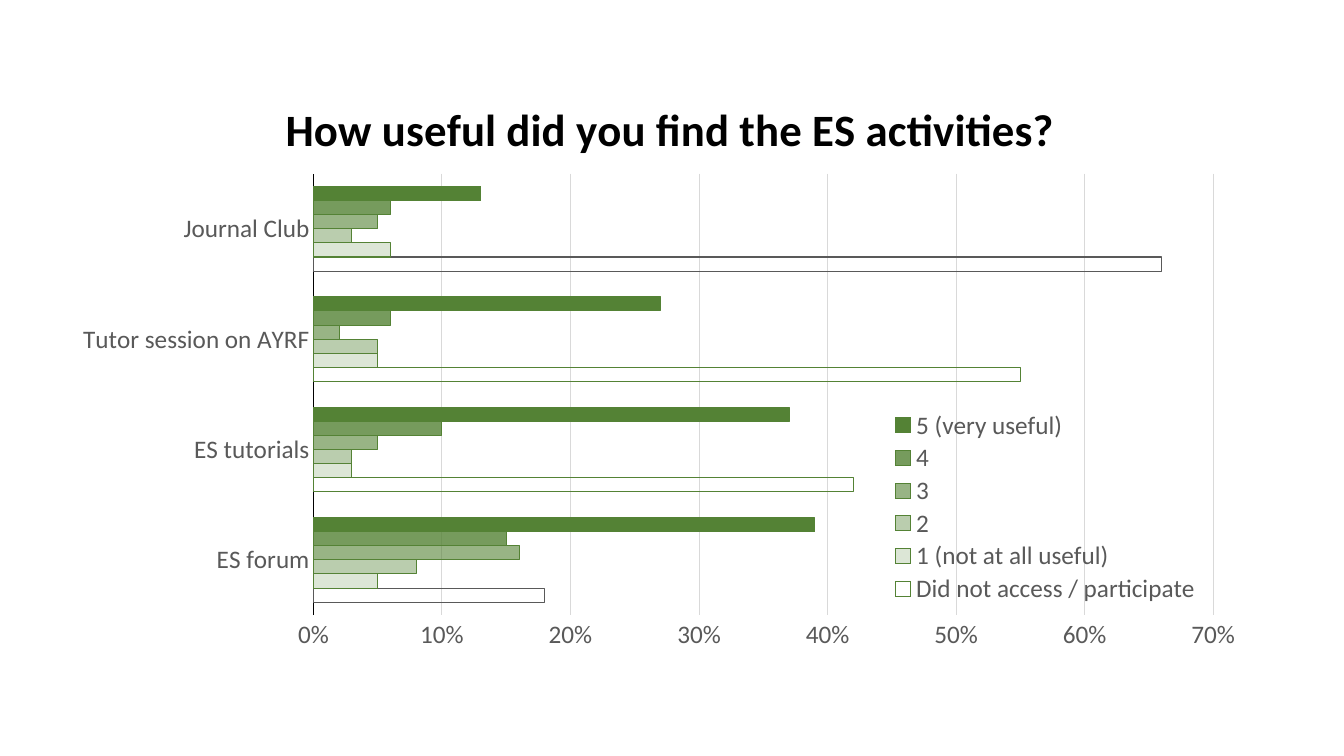
from lxml import etree
from pptx import Presentation
from pptx.chart.data import CategoryChartData
from pptx.dml.color import RGBColor
from pptx.enum.chart import XL_CHART_TYPE, XL_LEGEND_POSITION, XL_TICK_MARK
from pptx.oxml.ns import qn
from pptx.util import Inches, Pt

BARS = XL_CHART_TYPE.BAR_CLUSTERED
RIGHT = XL_LEGEND_POSITION.RIGHT
NO_TICK = XL_TICK_MARK.NONE

FONT = "Calibri"
GREEN, GREY, GRID, BLACK = "548235", "595959", "D9D9D9", "000000"
TITLE = "How useful did you find the ES activities?"
ACTIVITIES = ["ES forum", "ES tutorials", "Tutor session on AYRF", "Journal Club"]
RATINGS = {
    "Did not access / participate": (0.18, 0.42, 0.55, 0.66),
    "1 (not at all useful)": (0.05, 0.03, 0.05, 0.06),
    "2": (0.08, 0.03, 0.05, 0.03),
    "3": (0.16, 0.05, 0.02, 0.05),
    "4": (0.15, 0.10, 0.06, 0.06),
    "5 (very useful)": (0.39, 0.37, 0.27, 0.13),
}
GREY_OUTLINED = (0, 3)


def rgb(value):
    return RGBColor.from_string(value)


def style_font(font, size, color, bold=False):
    font.name = FONT
    font.size = Pt(size)
    font.bold = bold
    font.color.rgb = rgb(color)


def style_line(line, color):
    line.color.rgb = rgb(color)
    line.width = Pt(0.75)


def set_layout(parent, index, inner=False, **fractions):
    for old in parent.findall(qn("c:layout")):
        parent.remove(old)
    layout = etree.Element(qn("c:layout"))
    manual = etree.SubElement(layout, qn("c:manualLayout"))
    settings = {"layoutTarget": "inner"} if inner else {}
    settings.update(xMode="edge", yMode="edge", **fractions)
    for name, value in settings.items():
        etree.SubElement(manual, qn(f"c:{name}")).set("val", str(value))
    parent.insert(index, layout)


def style_title(chart):
    chart.has_title = True
    frame = chart.chart_title.text_frame
    frame.text = TITLE
    style_font(frame.paragraphs[0].runs[0].font, 32, BLACK, bold=True)
    set_layout(chart.chart_title._element, 1, x=0.18, y=0.05)


def style_axes(chart):
    for axis in (chart.category_axis, chart.value_axis):
        axis.major_tick_mark = axis.minor_tick_mark = NO_TICK
        style_font(axis.tick_labels.font, 18, GREY)
    style_line(chart.category_axis.format.line, BLACK)

    scale = chart.value_axis
    scale.minimum_scale, scale.maximum_scale, scale.major_unit = 0, 0.7, 0.1
    scale.format.line.fill.background()
    scale.has_major_gridlines = True
    style_line(scale.major_gridlines.format.line, GRID)
    scale.tick_labels.number_format = "0%"
    scale.tick_labels.number_format_is_linked = False


def style_bars(plot):
    plot.gap_width = 182
    plot.overlap = 0
    plot.vary_by_categories = False
    for level, series in enumerate(plot.series):
        series.invert_if_negative = False
        fill = series.format.fill
        style_line(series.format.line, GREEN)
        if level == 0:
            fill.background()
            for index in GREY_OUTLINED:
                point = series.points[index].format
                point.fill.background()
                style_line(point.line, GREY)
            continue
        fill.solid()
        fill.fore_color.rgb = rgb(GREEN)
        if level < 5:
            color = series.format._element.find(".//" + qn("a:srgbClr"))
            etree.SubElement(color, qn("a:alpha")).set("val", str(level * 20000))


def style_legend(chart):
    chart.has_legend = True
    legend = chart.legend
    legend.position = RIGHT
    legend.include_in_layout = True
    style_font(legend.font, 18, GREY)
    set_layout(legend._element, 1, x=0.69, y=0.58, w=0.26, h=0.33)


def add_ratings_chart(page, left, top, width, height):
    data = CategoryChartData(number_format="0%")
    data.categories = ACTIVITIES
    for name, shares in RATINGS.items():
        data.add_series(name, shares)
    chart = page.shapes.add_chart(BARS, Inches(left), Inches(top),
                                  Inches(width), Inches(height), data).chart
    style_font(chart.font, 18, BLACK)
    style_title(chart)
    style_axes(chart)
    style_bars(chart.plots[0])
    style_legend(chart)
    plot_area = chart._chartSpace.find(".//" + qn("c:plotArea"))
    set_layout(plot_area, 0, inner=True, x=0.21, y=0.19, w=0.75, h=0.735)


def main():
    deck = Presentation()
    deck.slide_width, deck.slide_height = Inches(13.33), Inches(7.5)
    page = deck.slides.add_slide(deck.slide_layouts[6])
    add_ratings_chart(page, 0.61, 0.59, 11.9, 5.96)
    deck.save("out.pptx")


if __name__ == "__main__":
    main()
